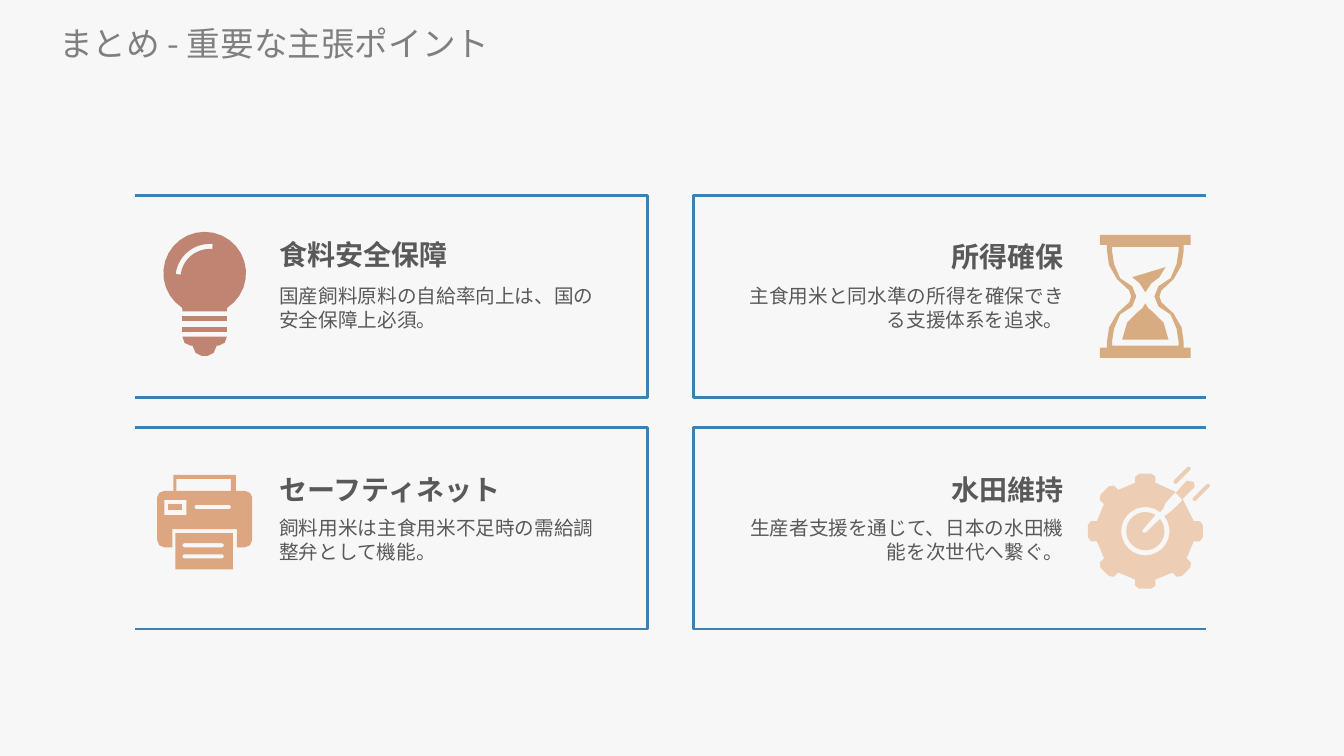
from math import atan2, cos, degrees, radians, sin

from lxml.etree import SubElement
from pptx import Presentation
from pptx.dml.color import RGBColor
from pptx.enum.text import MSO_ANCHOR as Anchor, PP_ALIGN as Align
from pptx.oxml.ns import qn
from pptx.util import Pt

PX = 9144
FONT = "Noto Sans CJK SC"
PAPER = RGBColor(0xF7, 0xF7, 0xF7)
TITLE_GREY = RGBColor(0x7F, 0x7F, 0x7F)
TEXT_GREY = RGBColor(0x59, 0x59, 0x59)
FRAME_BLUE = RGBColor(0x3A, 0x82, 0xB4)
BULB_RED = RGBColor(0xC0, 0x84, 0x72)
GLASS_TAN = RGBColor(0xD6, 0xAC, 0x80)
PRINTER_ORANGE = RGBColor(0xDC, 0xA6, 0x80)
GEAR_PEACH = RGBColor(0xED, 0xCE, 0xB5)

CARD_WIDTH, CARD_HEIGHT = 508, 200
CARD_LEFTS, CARD_TOPS = (134, 688), (194, 424)
TEXT_INSET = 143
ARC_STEPS = 24


def rectangle(left, top, width, height):
    right, bottom = left + width, top + height
    return [(left, top), (right, top), (right, bottom), (left, bottom)]


def arc(x, y, radius, start, end):
    angles = [radians(start + (end - start) * step / ARC_STEPS)
              for step in range(ARC_STEPS + 1)]
    return [(x + radius * cos(angle), y + radius * sin(angle)) for angle in angles]


def capsule(x1, y1, x2, y2, radius):
    heading = degrees(atan2(y2 - y1, x2 - x1))
    return (arc(x2, y2, radius, heading - 90, heading + 90)
            + arc(x1, y1, radius, heading + 90, heading + 270))


def mirror_across(half):
    return half + [(-x, y) for x, y in reversed(half)]


def mirror_both(quarter):
    return mirror_across(quarter + [(x, -y) for x, y in reversed(quarter)])


def bulb_parts():
    glass = arc(0, 0, 41, 123, 417) + [(22, 38), (-22, 38)]
    glint = arc(5, 5, 34, 187, 275) + arc(5, 5, 29, 275, 187)
    base = mirror_across([(22, 63), (20, 69), (14, 72), (12, 72), (9, 79), (3, 82)])
    return [[glass, glint], [rectangle(-22, 43, 44, 4)],
            [rectangle(-22, 53, 44, 5)], [base]]


def hourglass_parts():
    wall = mirror_both([(45, -61), (45, -51), (38, -51), (38, -45), (36, -31),
                        (28, -17), (16, -6), (14, 0)])
    hollow = mirror_both([(33, -49), (33, -45), (31, -32), (25, -18), (13, -10), (9, 0)])
    falling = [(20, -29), (-13, -19), (-8, -15), (-5, -12), (0, -4), (6, -13), (14, -19)]
    pile = mirror_across([(0, 7), (3, 12), (8, 16), (18, 26), (23, 43)])
    return [[wall, hollow], [falling], [pile]]


def printer_parts():
    case = mirror_across([(31, -36), (31, -20), (40, -20), (45, -18), (47, -14), (47, 29),
                          (45, 34), (40, 36), (32, 36), (32, 18)])
    sheet = [rectangle(-29, 22, 57, 36)] + [capsule(-20, y, 17, y, 2) for y in (34, 45)]
    holes = [rectangle(-28, -32, 54, 12), rectangle(-40, -11, 22, 15),
             capsule(-8, -4, 24, -4, 2)]
    return [[rectangle(-36, -7, 14, 6)], sheet, [case] + holes]


def gear_parts():
    rim = []
    for turn in range(0, 315, 45):
        c, s = cos(radians(turn)), sin(radians(turn))
        rim += [(x * c - y * s, x * s + y * c) for x, y in (
            (48, -10), (54, -10), (57, -6), (57, 6), (54, 10), (48, 10))]
    channel = ([(30, -39), (20, -28), (18, -23)] + arc(0, 0, 24, -52, -398)
               + [(27, -21), (37, -31)])
    arrow = [(30, -38), (41, -50), (48, -49), (49, -44), (37, -32)]
    dial = arc(0, 0, 19, -58, -400) + [(1, 1), (-2, 2), (-3, -1)]
    return [[capsule(30, -49, 43, -62, 2)], [capsule(49, -32, 62, -45, 2)],
            [rim + channel + arrow], [dial]]


CARDS = [
    ("食料安全保障", "国産飼料原料の自給率向上は、国の安全保障上必須。",
     bulb_parts(), 69, 77, BULB_RED, 36),
    ("所得確保", "主食用米と同水準の所得を確保できる支援体系を追求。",
     hourglass_parts(), 448, 100, GLASS_TAN, 38),
    ("セーフティネット", "飼料用米は主食用米不足時の需給調整弁として機能。",
     printer_parts(), 69, 83, PRINTER_ORANGE, 39),
    ("水田維持", "生産者支援を通じて、日本の水田機能を次世代へ繋ぐ。",
     gear_parts(), 448, 103, GEAR_PEACH, 39),
]


def add_outline(shapes, left, top, contours, close=True):
    builder = None
    for contour in contours:
        points = [((left + x) * PX, (top + y) * PX) for x, y in contour]
        if builder is None:
            builder = shapes.build_freeform(*points[0], scale=1.0)
        else:
            builder.move_to(*points[0])
        builder.add_line_segments(points[1:], close=close)
    shape = builder.convert_to_shape()
    shape.shadow.inherit = False
    return shape


def add_icon(page, x, y, parts, colour):
    group = page.shapes.add_group_shape()
    for contours in parts:
        shape = add_outline(group.shapes, x, y, contours)
        shape.fill.solid()
        shape.fill.fore_color.rgb = colour
        shape.line.fill.background()


def add_text(page, left, top, width, height, text, size, colour,
             bold=False, align=Align.LEFT, anchor=Anchor.TOP, margins=(0, 0)):
    box = page.shapes.add_textbox(left * PX, top * PX, width * PX, height * PX)
    frame = box.text_frame
    frame.word_wrap = True
    frame.vertical_anchor = anchor
    frame.margin_left = frame.margin_right = margins[0] * PX
    frame.margin_top, frame.margin_bottom = margins[1] * PX, 0
    para = frame.paragraphs[0]
    para.alignment = align
    span = para.add_run()
    span.text = text
    font = span.font
    font.name, font.size, font.bold = FONT, Pt(size), bold
    font.color.rgb = colour
    SubElement(span._r.get_or_add_rPr(), qn("a:ea")).set("typeface", FONT)


def add_card(page, left, top, mirrored, heading, body, icon, icon_x, icon_y,
             colour, heading_top):
    open_x, wall_x = (CARD_WIDTH, 0) if mirrored else (0, CARD_WIDTH)
    frame = add_outline(page.shapes, left, top, [[
        (open_x, CARD_HEIGHT), (wall_x, CARD_HEIGHT), (wall_x, 0), (open_x, 0)]], close=False)
    frame.fill.background()
    frame.line.color.rgb = FRAME_BLUE
    frame.line.width = Pt(2)
    align = Align.RIGHT if mirrored else Align.LEFT
    for text, y, width, height, size, bold, anchor in (
            (body, 88, 328, 77, 14, False, Anchor.TOP),
            (heading, heading_top, 276, 44, 20, True, Anchor.MIDDLE)):
        x = CARD_WIDTH - TEXT_INSET - width + 2 if mirrored else TEXT_INSET
        add_text(page, left + x, top + y, width, height, text, size,
                 TEXT_GREY, bold, align, anchor)
    add_icon(page, left + icon_x, top + icon_y, icon, colour)


def main():
    deck = Presentation()
    deck.slide_width, deck.slide_height = 1333 * PX, 750 * PX
    page = deck.slides.add_slide(deck.slide_layouts[6])
    page.background.fill.solid()
    page.background.fill.fore_color.rgb = PAPER
    add_text(page, 49, 18, 1110, 50, "まとめ - 重要な主張ポイント", 24, TITLE_GREY, margins=(10, 5))
    for index, card in enumerate(CARDS):
        row, column = divmod(index, 2)
        add_card(page, CARD_LEFTS[column], CARD_TOPS[row], column == 1, *card)
    deck.save("out.pptx")


if __name__ == "__main__":
    main()
